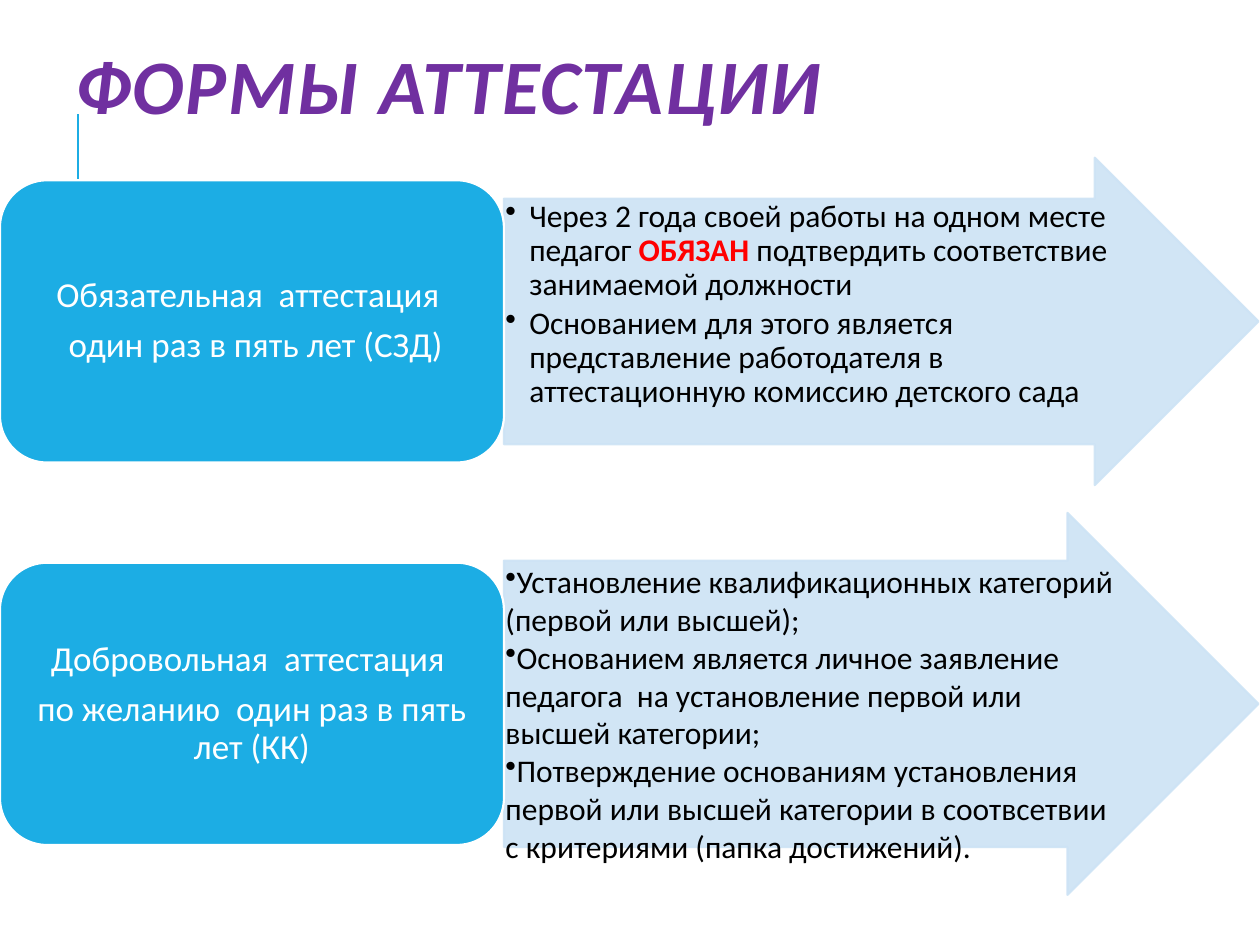
from dataclasses import dataclass
from typing import Any

from lxml import etree
from pptx import Presentation
from pptx.dml.color import RGBColor
from pptx.enum.shapes import MSO_CONNECTOR, MSO_SHAPE
from pptx.enum.text import MSO_ANCHOR, PP_ALIGN
from pptx.oxml.ns import qn
from pptx.util import Cm, Pt

ARROW = MSO_SHAPE.RIGHT_ARROW
ROUND = MSO_SHAPE.ROUNDED_RECTANGLE
LINE = MSO_CONNECTOR.STRAIGHT
MIDDLE = MSO_ANCHOR.MIDDLE
TOP = MSO_ANCHOR.TOP
LEFT = PP_ALIGN.LEFT
CENTER = PP_ALIGN.CENTER


@dataclass(frozen=True)
class Theme:
    font: str = "Calibri"
    blue: str = "1CADE4"
    pale: str = "CDE3F5"
    white: str = "FFFFFF"
    black: str = "000000"
    red: str = "FF0000"
    purple: str = "7030A0"
    title: int = 44
    label: int = 20
    body: int = 18
    edge: float = 1.25
    rule: float = 1.5


@dataclass(frozen=True)
class Run:
    text: str
    color: str
    bold: bool = False


@dataclass(frozen=True)
class Row:
    mid: float
    tall: float
    label: list[str]
    items: list[list[Run]]
    hang: float
    format: dict[str, Any]


THEME = Theme()
SPLIT = 10.16
REACH = 15.21
HIGH = 5.69
PAD = 0.03

LABEL = {"alignment": CENTER, "line_spacing": 0.9, "space_after": Pt(7)}
TIGHT = {"alignment": LEFT, "line_spacing": 0.9, "space_after": Pt(3)}
PLAIN = {"alignment": LEFT, "line_spacing": 1.0, "space_after": Pt(0)}


def plain(text: str) -> list[Run]:
    return [Run(text, THEME.black)]


ROWS = [
    Row(6.48, 6.6,
        ["Обязательная  аттестация ", " один раз в пять лет (СЗД)"],
        [[Run("Через 2 года своей работы на одном месте педагог", THEME.black),
          Run(" ОБЯЗАН ", THEME.red, True),
          Run("подтвердить соответствие  занимаемой должности", THEME.black)],
         plain("Основанием для этого является представление работодателя "
               "в аттестационную комиссию детского сада")],
        0.48, TIGHT),
    Row(14.19, 7.7,
        ["Добровольная  аттестация ", "по желанию  один раз в пять лет (КК)"],
        [plain("Установление квалификационных категорий (первой или высшей);"),
         plain("Основанием является личное заявление педагога  на установление "
               "первой или высшей категории;"),
         plain("Потверждение основаниям установления первой или высшей категории "
               "в соотвсетвии с критериями (папка достижений).")],
        0, PLAIN),
]


def apply(item: Any, values: dict[str, Any]) -> None:
    for name, value in values.items():
        setattr(item, name, value)


def paint(shape: Any, fill: str, line: str, alpha: int = 100) -> None:
    shape.shadow.inherit = False
    shape.fill.solid()
    shape.fill.fore_color.rgb = RGBColor.from_string(fill)
    shape.line.color.rgb = RGBColor.from_string(line)
    shape.line.width = Pt(THEME.edge)
    if alpha < 100:
        for color in shape._element.spPr.iter(qn("a:srgbClr")):
            etree.SubElement(color, qn("a:alpha"), val=str(alpha * 1000))


def frame(shape: Any, anchor: Any, side: float, edge: float) -> Any:
    body = shape.text_frame
    apply(body, {"word_wrap": True, "vertical_anchor": anchor,
                 "margin_left": Cm(side), "margin_right": Cm(side),
                 "margin_top": Cm(edge), "margin_bottom": Cm(edge)})
    return body


def write(body: Any, paras: list[list[Run]], size: int,
          values: dict[str, Any]) -> None:
    for i, runs in enumerate(paras):
        para = body.add_paragraph() if i else body.paragraphs[0]
        apply(para, values)
        for part in runs:
            run = para.add_run()
            run.text = part.text
            apply(run.font, {"name": THEME.font, "size": Pt(size),
                             "bold": part.bold})
            run.font.color.rgb = RGBColor.from_string(part.color)


def bullet(body: Any, hang: float) -> None:
    for para in body.paragraphs:
        props = para._p.get_or_add_pPr()
        props.set("marL", str(Cm(hang)))
        props.set("indent", str(-Cm(hang)))
        etree.SubElement(props, qn("a:buChar"), char="•")


def draw_row(shapes: Any, row: Row) -> None:
    top = row.mid - row.tall / 2
    arrow = shapes.add_shape(ARROW, Cm(SPLIT), Cm(top), Cm(REACH), Cm(row.tall))
    arrow.adjustments[0] = 0.75
    arrow.adjustments[1] = 0.5
    paint(arrow, THEME.pale, THEME.pale, 90)

    notes = shapes.add_textbox(Cm(SPLIT), Cm(top + row.tall / 8),
                               Cm(REACH - row.tall * 3 / 8),
                               Cm(row.tall * 3 / 4))
    body = frame(notes, TOP, PAD, PAD)
    write(body, row.items, THEME.body, row.format)
    bullet(body, row.hang)

    box = shapes.add_shape(ROUND, 0, Cm(row.mid - HIGH / 2), Cm(SPLIT), Cm(HIGH))
    paint(box, THEME.blue, THEME.white)
    lines = [[Run(text, THEME.white)] for text in row.label]
    write(frame(box, MIDDLE, 0.2, 0.1), lines, THEME.label, LABEL)


def draw_rule(shapes: Any) -> None:
    rule = shapes.add_connector(LINE, Cm(1.57), Cm(4.83), Cm(1.57), Cm(2.29))
    rule.line.color.rgb = RGBColor.from_string(THEME.blue)
    rule.line.width = Pt(THEME.rule)
    etree.SubElement(rule._element.spPr, qn("a:effectLst"))


def draw_title(shapes: Any) -> None:
    box = shapes.add_textbox(Cm(1.27), Cm(0.76), Cm(22.86), Cm(2.21))
    body = frame(box, MIDDLE, 0.25, 0.13)
    write(body, [[Run("ФОРМЫ АТТЕСТАЦИИ", THEME.purple, True)]], THEME.title,
          {"alignment": LEFT, "line_spacing": 0.8})
    run = body.paragraphs[0].runs[0]
    run.font.italic = True
    run._r.get_or_add_rPr().set("spc", "100")


def main() -> None:
    deck = Presentation()
    apply(deck, {"slide_width": Cm(25.4), "slide_height": Cm(19.05)})
    shapes = deck.slides.add_slide(deck.slide_layouts[6]).shapes
    draw_rule(shapes)
    draw_title(shapes)
    for row in ROWS:
        draw_row(shapes, row)
    deck.save("out.pptx")


if __name__ == "__main__":
    main()
